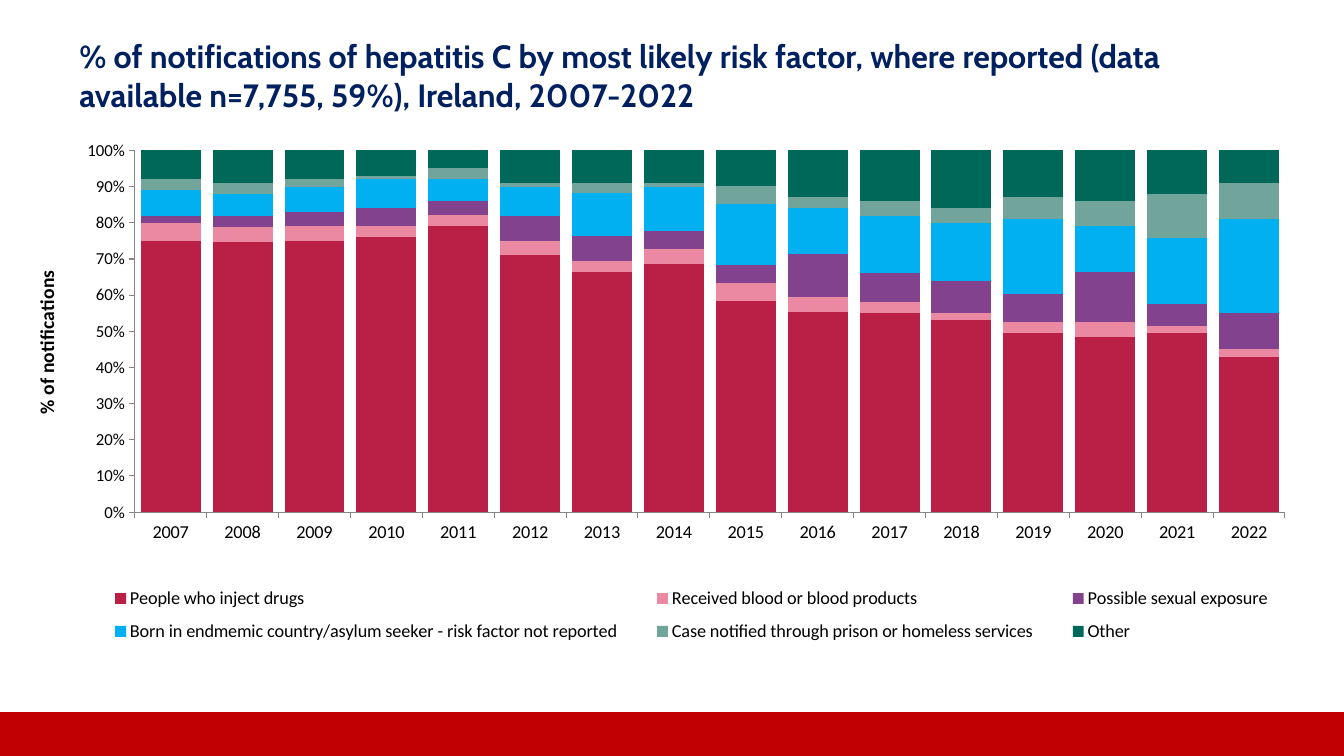
from pptx import Presentation
from pptx.chart.data import CategoryChartData
from pptx.dml.color import RGBColor
from pptx.enum import chart as ch, shapes, text
from pptx.oxml import parse_xml
from pptx.oxml.ns import nsdecls, qn
from pptx.util import Cm, Pt

NAVY = RGBColor(0x00, 0x20, 0x60)
RED = RGBColor(0xC0, 0x00, 0x00)
BLACK = RGBColor(0x00, 0x00, 0x00)
GREY = RGBColor(0x86, 0x86, 0x86)
CRIMSON = RGBColor(0xBA, 0x1F, 0x46)
PINK = RGBColor(0xEB, 0x89, 0xA3)
PURPLE = RGBColor(0x82, 0x42, 0x8D)
BLUE = RGBColor(0x00, 0xB0, 0xF0)
SAGE = RGBColor(0x71, 0xA5, 0x9C)
GREEN = RGBColor(0x00, 0x68, 0x58)

TITLE = ("% of notifications of hepatitis C by most likely risk factor, "
         "where reported (data available n=7,755, 59%), Ireland, 2007-2022")
YEARS = [str(year) for year in range(2007, 2023)]
RISKS = [
    ("People who inject drugs", CRIMSON,
     (75, 74, 75, 76, 80, 71, 67, 68, 59, 56, 55, 53, 50, 49, 49, 43)),
    ("Received blood or blood products", PINK,
     (5, 4, 4, 3, 3, 4, 3, 4, 5, 4, 3, 2, 3, 4, 2, 2)),
    ("Possible sexual exposure", PURPLE,
     (2, 3, 4, 5, 4, 7, 7, 5, 5, 12, 8, 9, 8, 14, 6, 10)),
    ("Born in endmemic country/asylum seeker - risk factor not reported", BLUE,
     (7, 6, 7, 8, 6, 8, 12, 12, 17, 13, 16, 16, 21, 13, 18, 26)),
    ("Case notified through prison or homeless services", SAGE,
     (3, 3, 2, 1, 3, 1, 3, 1, 5, 3, 4, 4, 6, 7, 12, 10)),
    ("Other", GREEN,
     (8, 9, 8, 7, 5, 9, 9, 9, 10, 13, 14, 16, 13, 14, 12, 9)),
]


def style(font, color=BLACK, **kinds):
    for key, val in kinds.items():
        setattr(font, key, val)
    font.color.rgb = color


def add_band(slide):
    band = slide.shapes.add_shape(shapes.MSO_SHAPE.RECTANGLE,
                                  Cm(0), Cm(17.98), Cm(33.86), Cm(1.07))
    band.shadow.inherit = False
    band.fill.solid()
    band.fill.fore_color.rgb = RED
    band.line.color.rgb = RED
    band.line.width = Pt(2)


def add_title(slide):
    box = slide.shapes.add_textbox(Cm(1.7), Cm(0.84), Cm(29), Cm(2.1))
    frame = box.text_frame
    form = {"word_wrap": True, "vertical_anchor": text.MSO_ANCHOR.MIDDLE,
            "margin_left": Cm(0.3), "margin_right": Cm(0.3),
            "margin_top": Cm(0.15), "margin_bottom": Cm(0.15)}
    for key, val in form.items():
        setattr(frame, key, val)
    run = frame.paragraphs[0].add_run()
    run.text = TITLE
    style(run.font, NAVY, name="Cabin", size=Pt(23), bold=True)


def place(part, index, inner, **sides):
    """Fix a chart part's place, in shares of the chart's size."""
    for old in part.findall(qn("c:layout")):
        part.remove(old)
    target = '<c:layoutTarget val="inner"/>' if inner else ""
    modes = '<c:xMode val="edge"/><c:yMode val="edge"/>'
    marks = "".join(f'<c:{key} val="{val}"/>' for key, val in sides.items())
    part.insert(index, parse_xml(
        f'<c:layout {nsdecls("c")}><c:manualLayout>{target}{modes}{marks}'
        '</c:manualLayout></c:layout>'))


def set_axis(axis, size):
    axis.has_major_gridlines = False
    axis.major_tick_mark = ch.XL_TICK_MARK.OUTSIDE
    axis.minor_tick_mark = ch.XL_TICK_MARK.NONE
    axis.format.line.color.rgb = GREY
    axis.format.line.width = Pt(0.75)
    style(axis.tick_labels.font, name="Calibri", size=Pt(size))


def set_scale(axis):
    axis.major_unit = 0.1
    axis.tick_labels.number_format = "0%"
    axis.tick_labels.number_format_is_linked = False
    para = axis.axis_title.text_frame.paragraphs[0]
    run = para.add_run()
    run.text = "% of notifications"
    style(run.font, name="Calibri", size=Pt(14), bold=True)


def set_legend(chart):
    chart.has_legend = True
    legend = chart.legend
    legend.position = ch.XL_LEGEND_POSITION.BOTTOM
    legend.include_in_layout = False
    style(legend.font, name="Calibri", size=Pt(13))
    place(legend._element, 1, False, x=0.04, y=0.81, w=0.95, h=0.14)


def add_bars(slide):
    data = CategoryChartData()
    data.categories = YEARS
    for name, _, vals in RISKS:
        data.add_series(name, vals)
    chart = slide.shapes.add_chart(
        ch.XL_CHART_TYPE.COLUMN_STACKED_100,
        Cm(0.74), Cm(3.38), Cm(32.38), Cm(13.77), data).chart
    chart.has_title = False
    style(chart.font, name="Calibri", size=Pt(10))
    plot = chart.plots[0]
    for key, val in {"gap_width": 20, "overlap": 100,
                     "vary_by_categories": False}.items():
        setattr(plot, key, val)
    for bars, (_, color, _) in zip(plot.series, RISKS):
        bars.format.fill.solid()
        bars.format.fill.fore_color.rgb = color
    set_axis(chart.category_axis, 13)
    set_axis(chart.value_axis, 12)
    set_scale(chart.value_axis)
    set_legend(chart)
    area = chart._chartSpace.chart.plotArea
    place(area, 0, True, x=0.082, y=0.03, w=0.895, h=0.662)


def main():
    deck = Presentation()
    deck.slide_width, deck.slide_height = Cm(33.86), Cm(19.05)
    slide = deck.slides.add_slide(deck.slide_layouts[6])
    add_band(slide)
    add_title(slide)
    add_bars(slide)
    deck.save("out.pptx")


if __name__ == "__main__":
    main()
